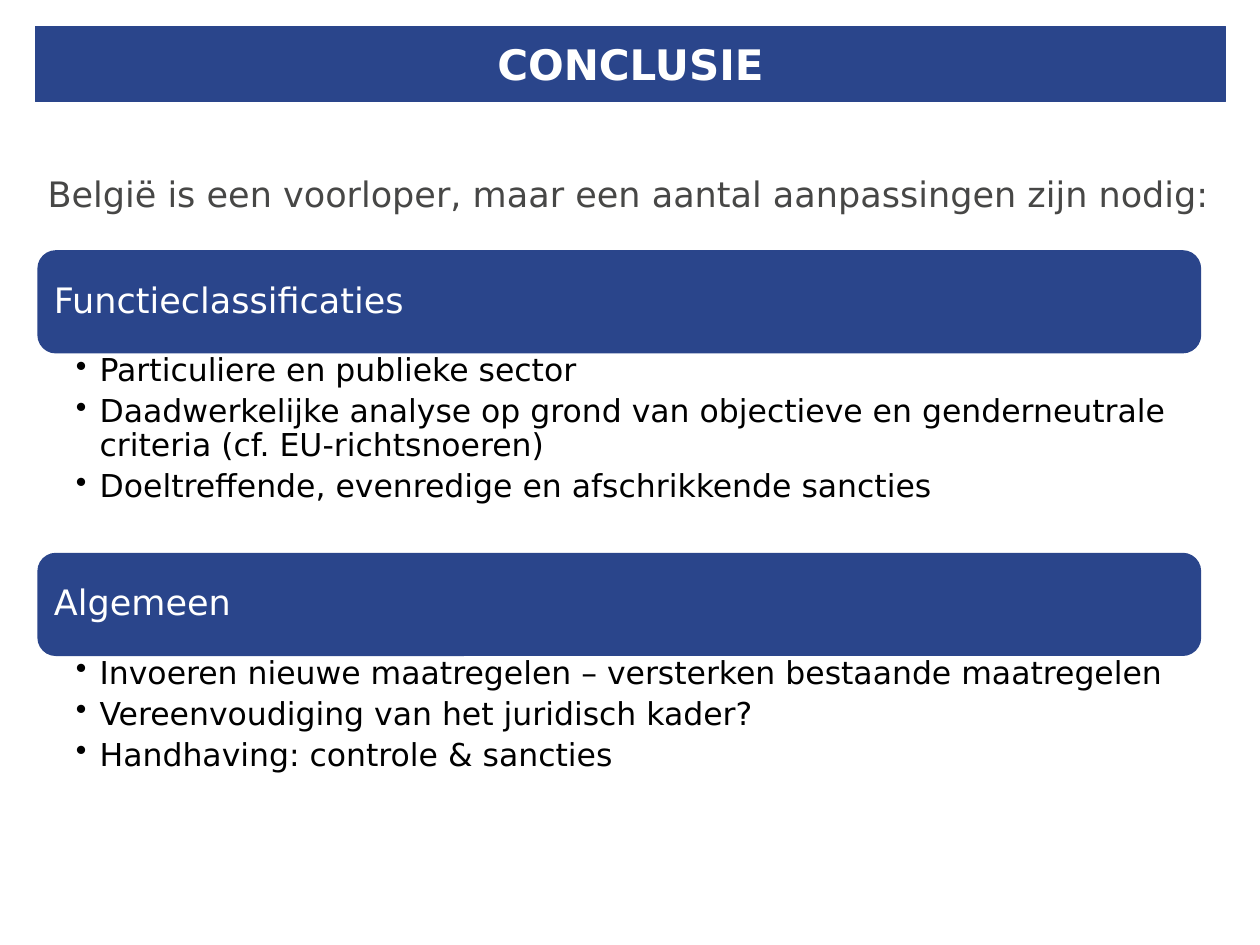
import pptx
import pptx.util
import pptx.dml.color
import pptx.enum.shapes
import pptx.enum.text
import pptx.oxml.ns
from lxml import etree

Cm = pptx.util.Cm
Pt = pptx.util.Pt
ALIGN = pptx.enum.text.PP_ALIGN
ANCHOR = pptx.enum.text.MSO_ANCHOR
FONT = "DejaVu Sans"
BLUE = "2A458B"
WHITE = "FFFFFF"
LEFT, WIDTH, BAR = 0.79, 23.39, 2.01

PARTS = [
    (5.08, 4.11, "Functieclassificaties", [
        "Particuliere en publieke sector",
        "Daadwerkelijke analyse op grond van objectieve en genderneutrale "
        "criteria (cf. EU-richtsnoeren)",
        "Doeltreffende, evenredige en afschrikkende sancties",
    ]),
    (11.18, 3, "Algemeen", [
        "Invoeren nieuwe maatregelen – versterken bestaande maatregelen",
        "Vereenvoudiging van het juridisch kader?",
        "Handhaving: controle & sancties",
    ]),
]


def color(code):
    return pptx.dml.color.RGBColor.from_string(code)


def paint(shape, width):
    shape.fill.solid()
    shape.fill.fore_color.rgb = color(BLUE)
    shape.line.color.rgb = color(BLUE)
    shape.line.width = Pt(width)


def style(para, size, code, align=ALIGN.LEFT, bold=False):
    para.alignment = align
    for run in para.runs:
        run.font.name = FONT
        run.font.size = Pt(size)
        run.font.bold = bold
        run.font.color.rgb = color(code)


def inset(frame, left, top, right, bottom):
    frame.word_wrap = True
    frame.margin_left, frame.margin_top = Cm(left), Cm(top)
    frame.margin_right, frame.margin_bottom = Cm(right), Cm(bottom)


def add_title(slide, text):
    title = slide.shapes.title
    title.left, title.top = Cm(0.71), Cm(0.53)
    title.width, title.height = Cm(24), Cm(1.52)
    paint(title, 0.75)
    frame = title.text_frame
    frame.text = text
    frame.vertical_anchor = ANCHOR.MIDDLE
    style(frame.paragraphs[0], 24, WHITE, ALIGN.CENTER, True)


def add_intro(slide, text):
    box = slide.shapes.add_textbox(Cm(0.71), Cm(3.35), Cm(24), Cm(1.07))
    frame = box.text_frame
    frame.word_wrap = True
    frame.text = text
    style(frame.paragraphs[0], 20, "474746")


def add_bar(slide, top, text):
    kind = pptx.enum.shapes.MSO_SHAPE.ROUNDED_RECTANGLE
    bar = slide.shapes.add_shape(kind, Cm(LEFT), Cm(top), Cm(WIDTH), Cm(BAR))
    bar.shadow.inherit = False
    paint(bar, 2)
    frame = bar.text_frame
    inset(frame, 0.2, 0.2, 0.2, 0.2)
    frame.vertical_anchor = ANCHOR.MIDDLE
    frame.text = text
    frame.paragraphs[0].line_spacing = 0.9
    style(frame.paragraphs[0], 20, WHITE)


def add_list(slide, top, height, items):
    box = slide.shapes.add_textbox(Cm(LEFT), Cm(top), Cm(WIDTH), Cm(height))
    frame = box.text_frame
    inset(frame, 0.74, 0.06, 0.36, 0.06)
    frame.text = "\n".join(items)
    for para in frame.paragraphs:
        props = para._p.get_or_add_pPr()
        props.set("marL", str(Cm(0.48)))
        props.set("indent", str(-Cm(0.48)))
        mark = etree.SubElement(props, pptx.oxml.ns.qn("a:buChar"))
        mark.set("char", "•")
        para.level = 1
        para.line_spacing = 0.9
        para.space_after = Pt(4)
        style(para, 18, "000000")


def main():
    deck = pptx.Presentation()
    deck.slide_width, deck.slide_height = Cm(25.4), Cm(19.05)
    slide = deck.slides.add_slide(deck.slide_layouts[5])
    add_title(slide, "CONCLUSIE")
    add_intro(slide, "België is een voorloper, maar een aantal aanpassingen zijn nodig:")
    for top, height, head, items in PARTS:
        add_bar(slide, top, head)
        add_list(slide, top + BAR, height, items)
    deck.save("out.pptx")


if __name__ == "__main__":
    main()
